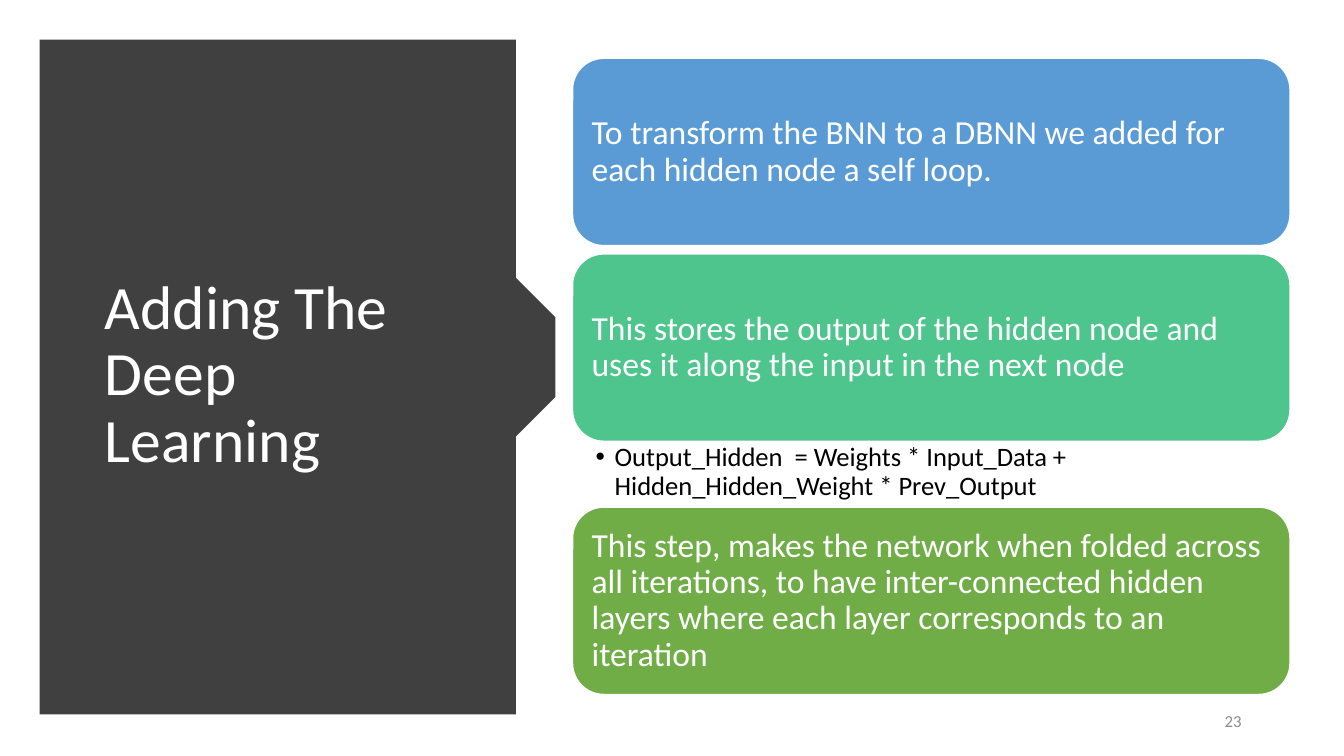
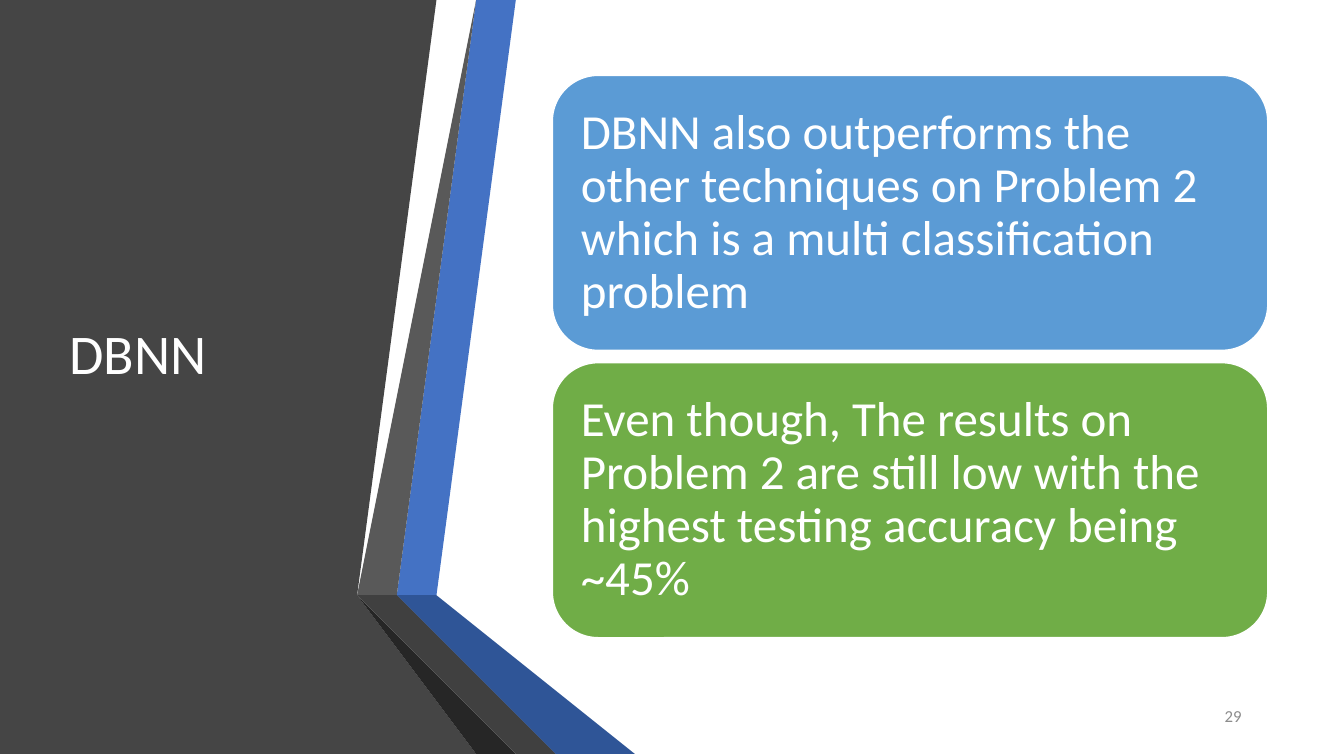
"""Build two slides on deep belief networks, each with a dark title panel and rounded cards."""
from pptx import Presentation
from pptx.dml.color import RGBColor
from pptx.enum.shapes import MSO_SHAPE
from pptx.enum.text import MSO_ANCHOR, MSO_AUTO_SIZE, PP_ALIGN
from pptx.util import Cm, Pt

WHITE, BLACK, GREY = "FFFFFF", "000000", "8C8C8C"
BLUE, TEAL, GREEN = "5B9BD5", "4DC58D", "70AD47"
CHARCOAL = "404040"
FONT = "Calibri"
rgb = RGBColor.from_string


def paint(sp, color, line=None):
    """Give a shape a flat fill and, if asked, a thin line."""
    sp.shadow.inherit = False
    sp.fill.solid()
    sp.fill.fore_color.rgb = rgb(color)
    if line:
        sp.line.color.rgb = rgb(line)
        sp.line.width = Pt(1)
    else:
        sp.line.fill.background()


def write(sp, text, size, color, align=PP_ALIGN.LEFT, spacing=0.9, **frame):
    """Put one formatted paragraph in a shape and return it."""
    tf = sp.text_frame
    frame = {"word_wrap": True, "auto_size": MSO_AUTO_SIZE.NONE,
             "vertical_anchor": MSO_ANCHOR.MIDDLE, **frame}
    for name, value in frame.items():
        setattr(tf, name, value)
    p = tf.paragraphs[0]
    for name, value in {"alignment": align, "line_spacing": spacing,
                        "space_before": Pt(0)}.items():
        setattr(p, name, value)
    r = p.add_run()
    r.text = text
    for name, value in {"name": FONT, "size": Pt(size)}.items():
        setattr(r.font, name, value)
    r.font.color.rgb = rgb(color)
    return p


SLIDES = [
    {
        "layout": 1,
        "title": ("Adding The Deep Learning", 44, (2.39, 2.82, 9.5, 13.31)),
        "number": ("23", (29.79, 17.65, 1.75, 1.02)),
        "panels": [
            (CHARCOAL, [
                (1.35, 1.32), (12.9, 1.32), (13.06, 2.26), (13.21, 3.4),
                (13.31, 4.55), (13.41, 5.69), (13.47, 6.81), (13.5, 7.9),
                (13.52, 8.97), (13.51, 10.01), (13.48, 11), (13.44, 11.96),
                (13.38, 13.16), (13.29, 14.25), (13.21, 15.21),
                (13.11, 16.08), (13.02, 16.79), (12.9, 17.68), (1.35, 17.68)]),
        ],
        "card": {"left": 14.43, "width": 18.08, "height": 4.72, "size": 24, "inset": 0.25},
        "cards": [
            (1.47, BLUE, "To transform the BNN to a DBNN we added for each hidden "
                         "node a self loop."),
            (6.4, TEAL, "This stores the output of the hidden node and uses it along "
                        "the input in the next node"),
            (12.78, GREEN, "This step, makes the network when folded across all "
                           "iterations, to have inter-connected hidden layers where "
                           "each layer corresponds to an iteration"),
        ],
    },
    {
        "layout": 5,
        "title": ("DBNN", 40, (1.5, 1.9, 7.72, 14.17)),
        "number": ("29", (28.52, 17.53, 3.02, 1.02)),
        "panels": [
            ("454545", [(0, 0), (11.4, 0), (9.04, 14.61), (12.24, 19.05), (0, 19.05)]),
            ("4472C4", [(10.06, 14.68), (10.74, 14.81), (13.18, 0), (12.47, 0)]),
            ("595959", [(12.32, 0), (11.61, 0), (9.22, 14.55), (9.91, 14.66)]),
            ("262626", [(9.22, 14.55), (12.47, 19.05), (12.62, 19.05)]),
            ("203864", [(10.06, 14.71), (14.07, 19.05), (14.22, 19.05)]),
            ("2F5597", [(10.06, 14.68), (10.06, 14.71), (14.22, 19.05),
                        (15.98, 19.05), (10.74, 14.81)]),
            (CHARCOAL, [(13.92, 19.05), (10.03, 14.81), (9.88, 14.68),
                        (9.91, 14.66), (9.22, 14.55), (12.62, 19.05)]),
        ],
        "card": {"left": 13.92, "width": 18.03, "height": 6.93, "size": 35, "inset": 0.38},
        "cards": [
            (1.9, BLUE, "DBNN also outperforms the other techniques on Problem 2 "
                        "which is a multi classification problem"),
            (9.14, GREEN, "Even though, The results on Problem 2 are still low with "
                          "the highest testing accuracy being ~45%"),
        ],
    },
]

prs = Presentation()
prs.slide_width, prs.slide_height = Cm(33.87), Cm(19.05)

for data in SLIDES:
    s = prs.slides.add_slide(prs.slide_layouts[data["layout"]])

    for color, points in data["panels"]:
        builder = s.shapes.build_freeform(*points[0], scale=Cm(1))
        builder.add_line_segments(points[1:], close=True)
        paint(builder.convert_to_shape(), color)

    text, size, box = data["title"]
    title = s.shapes.title
    for name, value in zip(("left", "top", "width", "height"), box):
        setattr(title, name, Cm(value))
    write(title, text, size, WHITE)
    s.shapes.element.append(title.element)

    card = data["card"]
    inset = Cm(card["inset"])
    for top, color, text in data["cards"]:
        sp = s.shapes.add_shape(MSO_SHAPE.ROUNDED_RECTANGLE, Cm(card["left"]), Cm(top),
                                Cm(card["width"]), Cm(card["height"]))
        paint(sp, color, WHITE)
        write(sp, text, card["size"], WHITE, margin_left=inset, margin_right=inset,
              margin_top=inset, margin_bottom=inset)

    text, box = data["number"]
    number = s.shapes.add_textbox(*map(Cm, box))
    write(number, text, 12, GREY, PP_ALIGN.RIGHT, 1.0)

body = prs.slides[0].placeholders[1]
for name, value in {"left": 14.43, "top": 11.1, "width": 18.08, "height": 1.65}.items():
    setattr(body, name, Cm(value))
p = write(body, "Output_Hidden  = Weights * Input_Data + Hidden_Hidden_Weight * Prev_Output",
          19, BLACK, vertical_anchor=MSO_ANCHOR.TOP, margin_left=Cm(0.58),
          margin_right=Cm(0.48), margin_top=Cm(0.08), margin_bottom=Cm(0.08))
pPr = p._p.get_or_add_pPr()
for name, value in {"marL": Cm(0.48), "indent": -Cm(0.48)}.items():
    pPr.set(name, str(int(value)))

prs.save("out.pptx")
